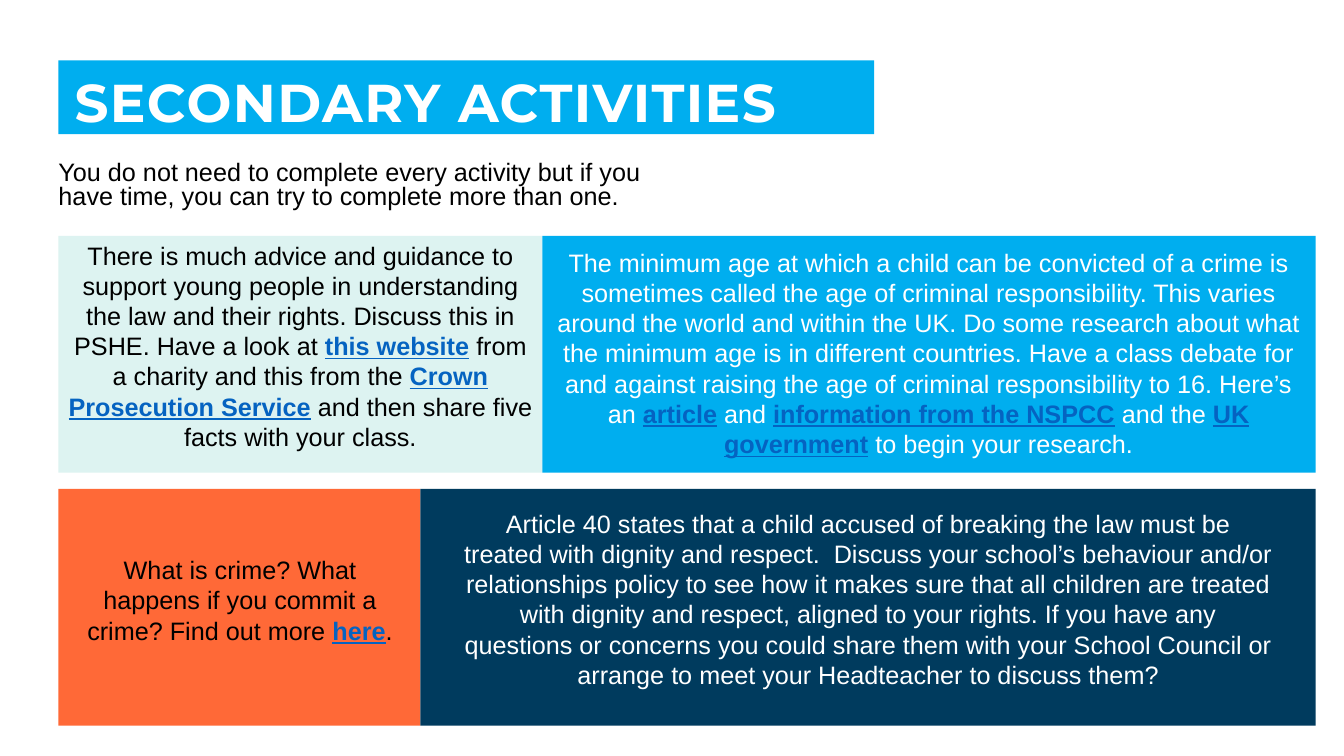
"""Build the secondary activities slide."""
from lxml import etree
from pptx import Presentation
from pptx import util as u
from pptx.dml.color import RGBColor
from pptx.enum import shapes, text
from pptx.oxml.ns import qn

WHITE = RGBColor(0xFF, 0xFF, 0xFF)
BLACK = RGBColor(0, 0, 0)
SKY = RGBColor(0x00, 0xAE, 0xEF)
MINT = RGBColor(0xDD, 0xF3, 0xF1)
ORANGE = RGBColor(0xFF, 0x69, 0x37)
NAVY = RGBColor(0x00, 0x3B, 0x5E)
LINK = RGBColor(0x05, 0x63, 0xC1)

WIDTH, HEIGHT = 13.33, 7.5
LEFT, RIGHT = 0.58, 13.05
ROW_TOPS = (2.34, 4.85)
ROW_HEIGHT = 2.35

INTRO = ("You do not need to complete every activity but if you have time, "
         "you can try to complete more than one.")
GUIDANCE = (
    "There is much advice and guidance to support young people in understanding "
    "the law and their rights. Discuss this in PSHE. Have a look at |this website| "
    "from a charity and this from the |Crown Prosecution Service| and then share "
    "five facts with your class.")
MINIMUM_AGE = (
    "The minimum age at which a child can be convicted of a crime is sometimes "
    "called the age of criminal responsibility. This varies around the world and "
    "within the UK. Do some research about what the minimum age is in different "
    "countries. Have a class debate for and against raising the age of criminal "
    "responsibility to 16. Here’s an |article| and |information from the NSPCC| "
    "and the |UK government| to begin your research.")
CRIME = ("What is crime? What happens if you commit a crime? "
         "Find out more |here|.")
ARTICLE_40 = (
    "Article 40 states that a child accused of breaking the law must be treated "
    "with dignity and respect.  Discuss your school’s behaviour and/or "
    "relationships policy to see how it makes sure that all children are treated "
    "with dignity and respect, aligned to your rights. If you have any questions "
    "or concerns you could share them with your School Council or arrange to meet "
    "your Headteacher to discuss them?")


def place(part, left, top, width, height):
    """Move and size a part of the slide, in inches."""
    part.left, part.top = u.Inches(left), u.Inches(top)
    part.width, part.height = u.Inches(width), u.Inches(height)


def fill_solid(part, color):
    """Give a part a plain fill without an outline."""
    part.fill.solid()
    part.fill.fore_color.rgb = color
    part.line.fill.background()


def write(part, wording, color=BLACK, size=18, font="Arial", bold=False,
          align=text.PP_ALIGN.CENTER, anchor=text.MSO_ANCHOR.TOP,
          insets=(0.1, 0.05, 0.1, 0.05), line_spacing=1.0, tracking=0):
    """Write wording into a part, with phrases between bars styled as links."""
    frame = part.text_frame
    frame.word_wrap = True
    frame.auto_size = text.MSO_AUTO_SIZE.NONE
    frame.vertical_anchor = anchor
    (frame.margin_left, frame.margin_top,
     frame.margin_right, frame.margin_bottom) = map(u.Inches, insets)
    paragraph = frame.paragraphs[0]
    paragraph.alignment = align
    paragraph.line_spacing = line_spacing
    paragraph.space_before = u.Pt(0)
    properties = paragraph._p.get_or_add_pPr()
    properties.set("marL", "0")
    properties.set("indent", "0")
    etree.SubElement(properties, qn("a:buNone"))
    for index, phrase in enumerate(wording.split("|")):
        linked = index % 2 == 1
        run = paragraph.add_run()
        run.text = phrase
        run.font.name = font
        run.font.size = u.Pt(size)
        run.font.bold = bold or linked
        run.font.underline = linked
        run.font.color.rgb = LINK if linked else color
        if tracking:
            run._r.get_or_add_rPr().set("spc", str(tracking * 100))


def add_panel(slide, row, left, right, color):
    """Add a coloured panel between two edges of a row."""
    panel = slide.shapes.add_shape(
        shapes.MSO_SHAPE.RECTANGLE, u.Inches(left), u.Inches(ROW_TOPS[row]),
        u.Inches(right - left), u.Inches(ROW_HEIGHT))
    panel.shadow.inherit = False
    fill_solid(panel, color)


def add_activity(slide, wording, box, color):
    """Add the centred wording of one activity."""
    activity = slide.shapes.add_textbox(*map(u.Inches, box))
    write(activity, wording, color)


def main():
    """Build and save the slide."""
    deck = Presentation()
    deck.slide_width, deck.slide_height = u.Inches(WIDTH), u.Inches(HEIGHT)
    slide = deck.slides.add_slide(deck.slide_layouts[1])

    heading, intro = slide.placeholders
    place(heading, LEFT, 0.6, 8.09, 0.73)
    fill_solid(heading, SKY)
    write(heading, "SECONDARY ACTIVITIES", WHITE, size=38, font="Montserrat",
          bold=True, align=text.PP_ALIGN.LEFT, anchor=text.MSO_ANCHOR.MIDDLE,
          insets=(0.16, 0.16, 0.12, 0), line_spacing=0.9, tracking=1)
    place(intro, LEFT, 1.56, 6.21, 0.62)
    write(intro, INTRO, align=text.PP_ALIGN.LEFT,
          insets=(0, 0.05, 0.1, 0.05), line_spacing=0.8)

    top_split, bottom_split = 5.38, 4.17
    for row, left, right, color in (
            (0, LEFT, top_split, MINT), (0, top_split, RIGHT, SKY),
            (1, LEFT, bottom_split, ORANGE), (1, bottom_split, RIGHT, NAVY)):
        add_panel(slide, row, left, right, color)

    for wording, box, color in (
            (GUIDANCE, (LEFT, 2.33, 4.8, 2.22), BLACK),
            (MINIMUM_AGE, (top_split, 2.4, 7.66, 2.22), WHITE),
            (CRIME, (0.64, 5.45, 3.48, 1.01), BLACK),
            (ARTICLE_40, (4.5, 4.99, 8.22, 1.92), WHITE)):
        add_activity(slide, wording, box, color)

    deck.save("out.pptx")


if __name__ == "__main__":
    main()
